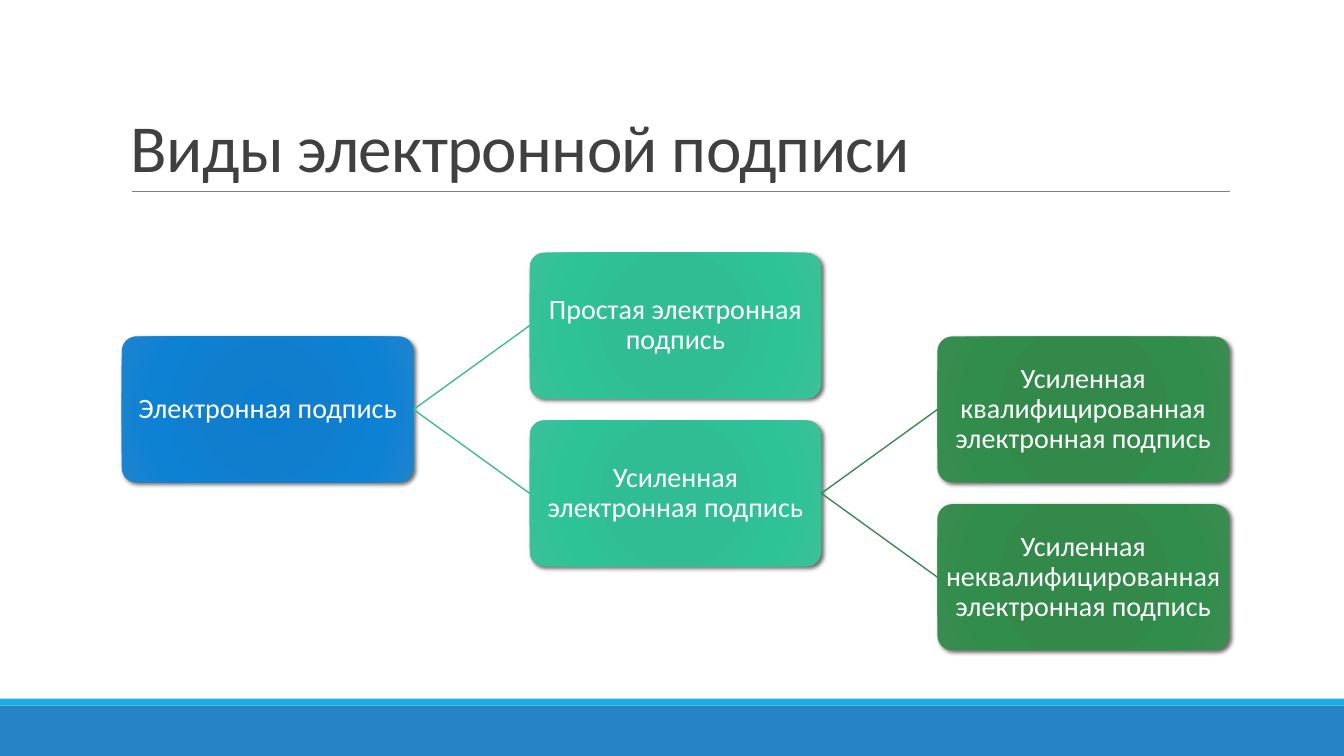
from lxml import etree
from pptx import Presentation
from pptx.dml.color import RGBColor
from pptx.enum.shapes import MSO_CONNECTOR, MSO_SHAPE
from pptx.enum.text import MSO_ANCHOR, PP_ALIGN
from pptx.oxml.ns import qn
from pptx.util import Pt

RECT, ROUNDED = MSO_SHAPE.RECTANGLE, MSO_SHAPE.ROUNDED_RECTANGLE
STRAIGHT = MSO_CONNECTOR.STRAIGHT
MIDDLE, BOTTOM = MSO_ANCHOR.MIDDLE, MSO_ANCHOR.BOTTOM
LEFT, CENTER = PP_ALIGN.LEFT, PP_ALIGN.CENTER

TITLE = "Виды электронной подписи"
SIGNATURES = ("Электронная подпись", [
    ("Простая электронная подпись", []),
    ("Усиленная электронная подпись", [
        ("Усиленная квалифицированная электронная подпись", []),
        ("Усиленная неквалифицированная электронная подпись", []),
    ]),
])

COLORS = {"title": "404040", "rule": "808080", "band": "2683C6",
          "stripe": "1CADE4", "label": "FFFFFF", "shadow": "000000"}
LEVEL_GRADIENTS = [
    ("0D7ECF", "117ECD", "0D81D4", "1E84CE"),
    ("2DBE94", "30BD94", "2EC397", "3CC09A"),
    ("2F8949", "32894A", "318D4B", "3A8C51"),
]
BRANCH_COLORS = [None, "42BA97", "3E8853"]
GRADIENT_STOPS = (0, 34, 70, 100)

SLIDE_W, SLIDE_H = 960, 540
BOX_W, BOX_H = 208.4, 104.2
TREE_LEFT, TREE_MIDDLE = 87, 292.5
LEVEL_STEP, HALF_ROW = 291.3, 59.9

deck = Presentation()
deck.slide_width, deck.slide_height = Pt(SLIDE_W), Pt(SLIDE_H)
slide = deck.slides.add_slide(deck.slide_layouts[6])
shapes = slide.shapes


def write(shape, text, size, color, align, anchor, spacing, inset, tracking=0):
    frame = shape.text_frame
    frame.word_wrap = True
    frame.vertical_anchor = anchor
    frame.margin_left = frame.margin_right = Pt(inset[0])
    frame.margin_top = frame.margin_bottom = Pt(inset[1])
    paragraph = frame.paragraphs[0]
    paragraph.alignment = align
    paragraph.line_spacing = spacing
    run = paragraph.add_run()
    run.text = text
    run.font.size, run.font.name = Pt(size), "Calibri"
    run.font.color.rgb = RGBColor.from_string(color)
    if tracking:
        run._r.get_or_add_rPr().set("spc", str(int(tracking * 100)))


def add_bar(top, height, color):
    bar = shapes.add_shape(RECT, 0, Pt(top), Pt(SLIDE_W), Pt(height))
    bar.shadow.inherit = False
    bar.fill.solid()
    bar.fill.fore_color.rgb = RGBColor.from_string(color)
    bar.line.fill.background()


def add_line(x1, y1, x2, y2, color, width):
    line = shapes.add_connector(STRAIGHT, Pt(x1), Pt(y1), Pt(x2), Pt(y2))
    line.line.color.rgb = RGBColor.from_string(color)
    line.line.width = Pt(width)
    etree.SubElement(line._element.spPr, qn("a:effectLst"))


def add_color(parent, color):
    return etree.SubElement(parent, qn("a:srgbClr"), val=color)


def fill_radial(shape, colors):
    shape.fill.gradient()
    gradient = shape._element.spPr.find(qn("a:gradFill"))
    for child in list(gradient):
        gradient.remove(child)
    stops = etree.SubElement(gradient, qn("a:gsLst"))
    for position, color in zip(GRADIENT_STOPS, colors):
        add_color(etree.SubElement(stops, qn("a:gs"), pos=str(position * 1000)), color)
    radial = etree.SubElement(gradient, qn("a:path"), {"path": "circle"})
    etree.SubElement(radial, qn("a:fillToRect"), dict.fromkeys("ltrb", "100000"))


def cast_shadow(shape):
    shape.shadow.inherit = False
    effects = shape._element.spPr.find(qn("a:effectLst"))
    outer = etree.SubElement(effects, qn("a:outerShdw"), blurRad=str(Pt(3)),
                             dist=str(Pt(2)), dir=str(45 * 60000), rotWithShape="0")
    etree.SubElement(add_color(outer, COLORS["shadow"]), qn("a:alpha"), val="60000")


def add_branch(signature, level, middle):
    label, kinds = signature
    left = TREE_LEFT + level * LEVEL_STEP
    box = shapes.add_shape(ROUNDED, Pt(left), Pt(middle - BOX_H / 2), Pt(BOX_W), Pt(BOX_H))
    box.adjustments[0] = 0.1
    fill_radial(box, LEVEL_GRADIENTS[level])
    box.line.fill.background()
    cast_shadow(box)
    write(box, label, size=20, color=COLORS["label"], align=CENTER,
          anchor=MIDDLE, spacing=0.9, inset=(0.9, 0.9))
    for index, kind in enumerate(kinds):
        kind_middle = middle + (2 * index - len(kinds) + 1) * HALF_ROW
        add_line(left + BOX_W, middle, left + LEVEL_STEP, kind_middle,
                 BRANCH_COLORS[level + 1], 1)
        add_branch(kind, level + 1, kind_middle)


add_bar(504, 36, COLORS["band"])
add_bar(499, 5, COLORS["stripe"])
add_line(94, 136.8, 878.5, 136.8, COLORS["rule"], 0.5)
title = shapes.add_textbox(Pt(86.4), Pt(22.5), Pt(792), Pt(114.3))
write(title, TITLE, size=48, color=COLORS["title"], align=LEFT,
      anchor=BOTTOM, spacing=0.85, inset=(7.2, 3.6), tracking=-0.5)
add_branch(SIGNATURES, 0, TREE_MIDDLE)

deck.save("out.pptx")
